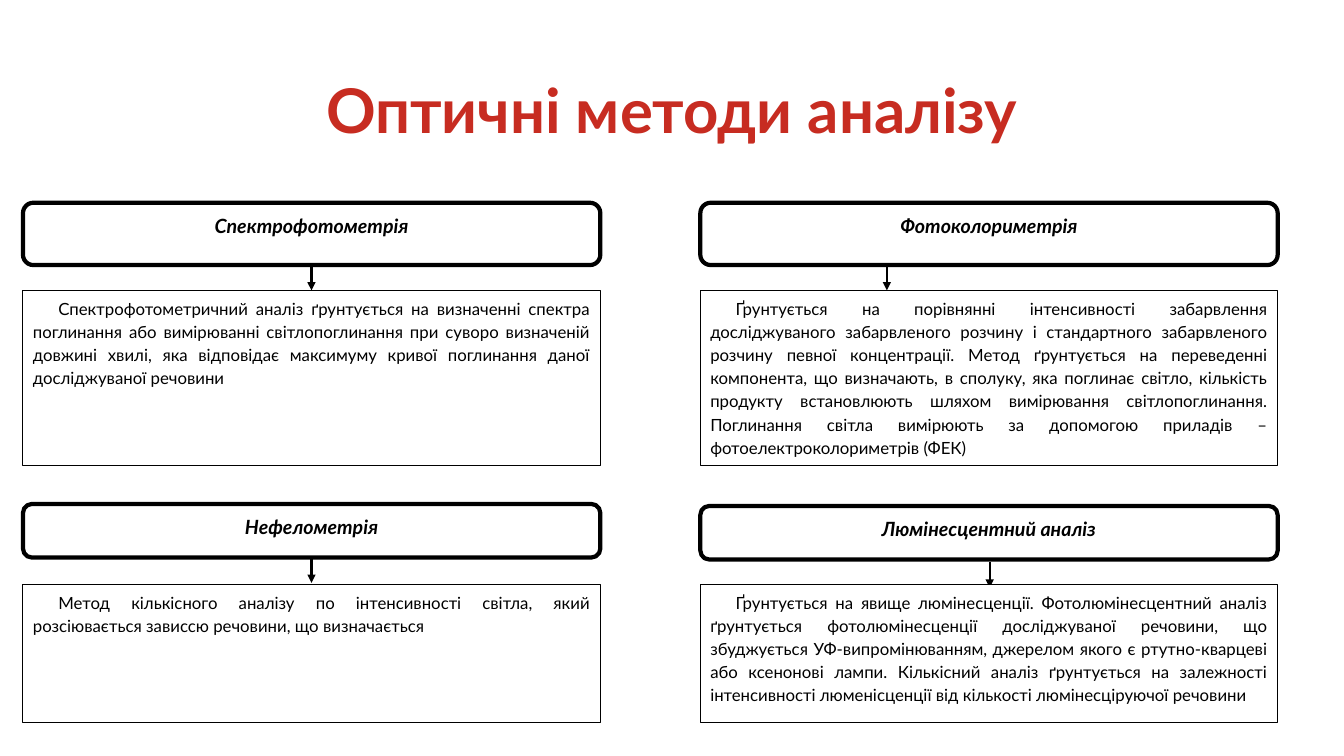
from lxml.etree import SubElement
from pptx import Presentation
from pptx.dml.color import RGBColor
from pptx.enum.shapes import MSO_CONNECTOR, MSO_SHAPE
from pptx.enum.text import MSO_ANCHOR, PP_ALIGN
from pptx.oxml.ns import qn
from pptx.util import Cm, Pt

TITLE = "Оптичні методи аналізу"
# name, description, column, row, top of the name box, arrow x, arrow top
METHODS = [
    ("Спектрофотометрія",
     "Спектрофотометричний аналіз ґрунтується на визначенні спектра поглинання або "
     "вимірюванні світлопоглинання при суворо визначеній довжині хвилі, яка відповідає "
     "максимуму кривої поглинання даної досліджуваної речовини",
     0, 0, 5.11, 7.85, 6.68),
    ("Фотоколориметрія",
     "Ґрунтується на порівнянні інтенсивності забарвлення досліджуваного забарвленого "
     "розчину і стандартного забарвленого розчину певної концентрації. Метод ґрунтується "
     "на переведенні компонента, що визначають, в сполуку, яка поглинає світло, кількість "
     "продукту встановлюють шляхом вимірювання світлопоглинання. Поглинання світла "
     "вимірюють за допомогою приладів – фотоелектроколориметрів (ФЕК)",
     1, 0, 5.11, 22.35, 6.68),
    ("Нефелометрія",
     "Метод кількісного аналізу по інтенсивності світла, який розсіювається зависсю "
     "речовини, що визначається",
     0, 1, 12.7, 7.85, 14.05),
    ("Люмінесцентний аналіз",
     "Ґрунтується на явище люмінесценції. Фотолюмінесцентний аналіз ґрунтується "
     "фотолюмінесценції досліджуваної речовини, що збуджується УФ-випромінюванням, "
     "джерелом якого є ртутно-кварцеві або ксенонові лампи. Кількісний аналіз ґрунтується "
     "на залежності інтенсивності люменісценції від кількості люмінесціруючої речовини",
     1, 1, 12.75, 24.94, 14.17),
]

# Layout in centimetres
COLUMN_LEFTS = (0.58, 17.65)
COLUMN_WIDTH = 14.55
NAME_HEIGHTS = (1.57, 1.35)
DESCRIPTION_TOPS = (7.32, 14.73)
DESCRIPTION_HEIGHTS = (4.42, 3.48)
ARROW_LENGTH = 0.64


def color(value):
    return RGBColor.from_string(value)


def write(frame, text, size, ink="000000", bold=False, italic=False,
          align=PP_ALIGN.CENTER, spacing=1.15, after=10, indent=0,
          anchor=MSO_ANCHOR.TOP):
    frame.word_wrap = True
    frame.vertical_anchor = anchor
    paragraph = frame.paragraphs[0]
    paragraph.alignment = align
    paragraph.line_spacing = spacing
    paragraph.space_before = Pt(0)
    paragraph.space_after = Pt(after)
    if indent:
        properties = paragraph._p.get_or_add_pPr()
        properties.set("marL", "0")
        properties.set("indent", str(Cm(indent)))
    run = paragraph.add_run()
    run.text = text
    font = run.font
    font.name, font.size, font.bold, font.italic = "Lato", Pt(size), bold, italic
    font.color.rgb = color(ink)


def add_box(kind, left, top, height, border):
    box = slide.shapes.add_shape(kind, Cm(left), Cm(top), Cm(COLUMN_WIDTH), Cm(height))
    box.shadow.inherit = False
    box.fill.solid()
    box.fill.fore_color.rgb = color("FFFFFF")
    box.line.color.rgb = color("000000")
    box.line.width = Pt(border)
    return box


def add_arrow(x, top):
    arrow = slide.shapes.add_connector(
        MSO_CONNECTOR.STRAIGHT, Cm(x), Cm(top), Cm(x), Cm(top + ARROW_LENGTH))
    arrow.line.color.rgb = color("000000")
    arrow.line.width = Pt(1.5)
    properties = arrow.element.spPr
    SubElement(properties.find(qn("a:ln")), qn("a:tailEnd"), type="triangle")
    SubElement(properties, qn("a:effectLst"))


presentation = Presentation()
presentation.slide_width, presentation.slide_height = Cm(33.87), Cm(19.05)
slide = presentation.slides.add_slide(presentation.slide_layouts[5])

# Title
title = slide.shapes.title
title.left, title.top, title.width, title.height = Cm(2.33), Cm(1.01), Cm(29.21), Cm(3.68)
write(title.text_frame, TITLE, 44, ink="C72C21", bold=True, spacing=0.9, after=0,
      anchor=MSO_ANCHOR.MIDDLE)

# Each method: name, arrow, description
for name, description, column, row, name_top, arrow_x, arrow_top in METHODS:
    left = COLUMN_LEFTS[column]
    name_box = add_box(MSO_SHAPE.ROUNDED_RECTANGLE, left, name_top, NAME_HEIGHTS[row], 3)
    write(name_box.text_frame, name, 14, bold=True, italic=True)
    add_arrow(arrow_x, arrow_top)
    description_box = add_box(MSO_SHAPE.RECTANGLE, left, DESCRIPTION_TOPS[row],
                              DESCRIPTION_HEIGHTS[row], 0.75)
    write(description_box.text_frame, description, 12, align=PP_ALIGN.JUSTIFY, indent=0.64)

presentation.save("out.pptx")
